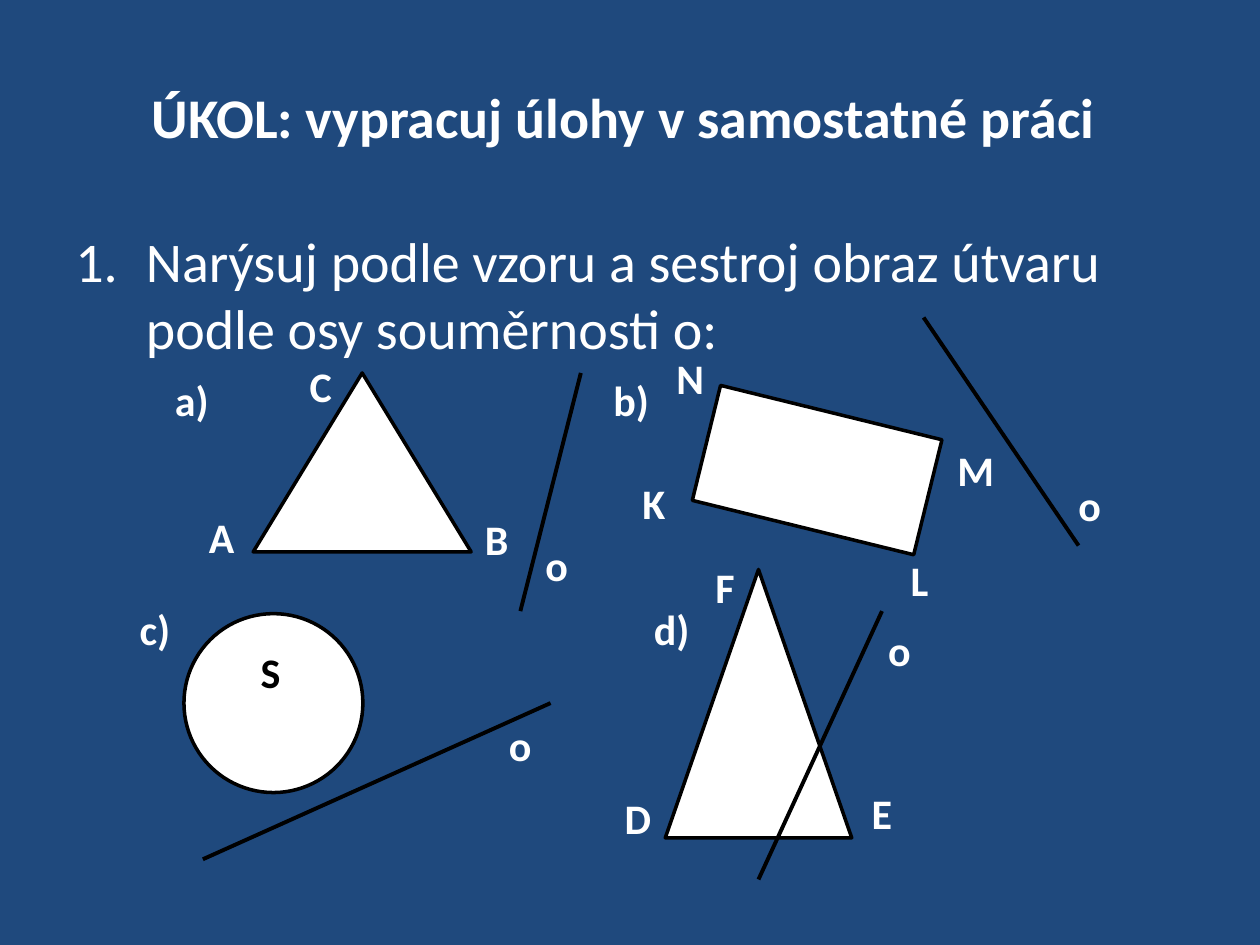
from pptx import Presentation
from pptx.dml.color import RGBColor
from pptx.enum.shapes import MSO_CONNECTOR, MSO_SHAPE
from pptx.enum.text import MSO_ANCHOR, MSO_AUTO_SIZE, PP_ALIGN
from pptx.oxml.ns import qn
from pptx.util import Inches, Pt
from lxml import etree

LINE = MSO_CONNECTOR.STRAIGHT
TRI, RECT, OVAL = (MSO_SHAPE.ISOSCELES_TRIANGLE, MSO_SHAPE.RECTANGLE,
                   MSO_SHAPE.OVAL)
MID, TOP = MSO_ANCHOR.MIDDLE, MSO_ANCHOR.TOP
MIDDLE, LEFT = PP_ALIGN.CENTER, PP_ALIGN.LEFT
GROW, FIXED = MSO_AUTO_SIZE.SHAPE_TO_FIT_TEXT, MSO_AUTO_SIZE.NONE

COLS, ROWS = 100, 75
WIDE, HIGH = Inches(10), Inches(7.5)
HEX = {"back": "1F497D", "chalk": "FFFFFF", "ink": "000000"}


def tint(name):
    return RGBColor.from_string(HEX[name])


class Board:
    """Draws on one slide; lengths are columns and rows of the grid."""

    font = "Calibri"
    large, small = Pt(32), Pt(24)
    edge, axis = Pt(2), Pt(2.25)

    def __init__(self, deck):
        self.slide = deck.slides.add_slide(deck.slide_layouts[5])
        self.shapes = self.slide.shapes
        fill = self.slide.background.fill
        fill.solid()
        fill.fore_color.rgb = tint("back")

    def grid(self, *cells):
        """Turn alternating columns and rows into lengths."""
        units = (WIDE / COLS, HIGH / ROWS)
        return [round(n * units[i % 2]) for i, n in enumerate(cells)]

    def words(self, frame, text, size, bold=True, color="chalk", align=LEFT):
        para = frame.paragraphs[0]
        para.alignment = align
        run = para.add_run()
        run.text = text
        run.font.name, run.font.size, run.font.bold = self.font, size, bold
        run.font.color.rgb = tint(color)
        return para

    def title(self, text, *box):
        head = self.shapes.title
        head.left, head.top, head.width, head.height = self.grid(*box)
        head.text_frame.vertical_anchor = MID
        self.words(head.text_frame, text, self.large, align=MIDDLE)

    def task(self, text, *box):
        """Add a numbered paragraph with a hanging indent."""
        frame = self.shapes.add_textbox(*self.grid(*box)).text_frame
        frame.word_wrap, frame.auto_size = True, FIXED
        frame.vertical_anchor = TOP
        para = self.words(frame, text, self.large, bold=False)
        para.space_before = Pt(6.4)
        props = para._p.get_or_add_pPr()
        props.set("marL", str(Inches(0.56)))
        props.set("indent", str(-Inches(0.56)))
        etree.SubElement(props, qn("a:buFont"), typeface="+mj-lt")
        etree.SubElement(props, qn("a:buAutoNum"), type="arabicPeriod")

    def label(self, text, x, y, wide, color="chalk"):
        box = self.shapes.add_textbox(*self.grid(x, y, wide, 5))
        frame = box.text_frame
        frame.word_wrap, frame.auto_size = False, GROW
        self.words(frame, text, self.small, color=color)

    def figure(self, kind, box, turn=0):
        item = self.shapes.add_shape(kind, *self.grid(*box))
        item.rotation = turn
        item.shadow.inherit = False
        item.fill.solid()
        item.fill.fore_color.rgb = tint("chalk")
        item.line.color.rgb = tint("ink")
        item.line.width = self.edge

    def mirror(self, *ends):
        """Draw an axis of symmetry."""
        item = self.shapes.add_connector(LINE, *self.grid(*ends))
        item.line.color.rgb = tint("ink")
        item.line.width = self.axis
        etree.SubElement(item._element.spPr, qn("a:effectLst"))


# Each task: figure, its box, its turn, ends of its axis
TASKS = [
    (TRI, (20.1, 29.6, 17.3, 14.2), 0, (46.1, 29.6, 41.3, 48.5)),
    (RECT, (55.8, 32.6, 18.1, 9.4), 193.8, (73.3, 25.2, 85.6, 43.3)),
    (TRI, (52.8, 45.2, 14.8, 21.3), 0, (60.2, 69.8, 70, 48.5)),
    (OVAL, (14.6, 48.7, 14.2, 14.2), 0, (16.1, 68.2, 43.7, 55.8)),
]
# Each label: text, column, row, width
LABELS = [
    ("A", 15.6, 40.1, 4.1), ("S", 19.7, 50.8, 3.6, "ink"),
    ("E", 68.2, 62, 3.7), ("D", 48.6, 62.4, 4.1), ("F", 55.8, 44.1, 3.6),
    ("C", 23.6, 28.1, 3.8), ("B", 37.5, 40.3, 3.9),
    ("N", 52.7, 27.5, 4.2), ("M", 75, 34.8, 5), ("L", 71.3, 43.5, 3.4),
    ("K", 50, 37.4, 3.9),
    ("o", 69.5, 49.1, 3.8), ("o", 39.4, 56.6, 3.8),
    ("o", 42.3, 42.3, 3.8), ("o", 84.6, 37.6, 3.8),
    ("b)", 47.7, 29.2, 4.9), ("a)", 12.9, 29.2, 4.7),
    ("d)", 50.9, 47.4, 4.9), ("c)", 10.1, 47.4, 4.5),
]


def main():
    deck = Presentation()
    deck.slide_width, deck.slide_height = WIDE, HIGH
    board = Board(deck)
    board.title("ÚKOL: vypracuj úlohy v samostatné práci ", 5, 3, 90, 12.5)
    board.task("Narýsuj podle vzoru a sestroj obraz útvaru "
               "podle osy souměrnosti o:", 5, 17.5, 90, 49.5)
    for kind, box, turn, ends in TASKS:
        board.figure(kind, box, turn)
        board.mirror(*ends)
    for item in LABELS:
        board.label(*item)
    deck.save("out.pptx")


if __name__ == "__main__":
    main()
